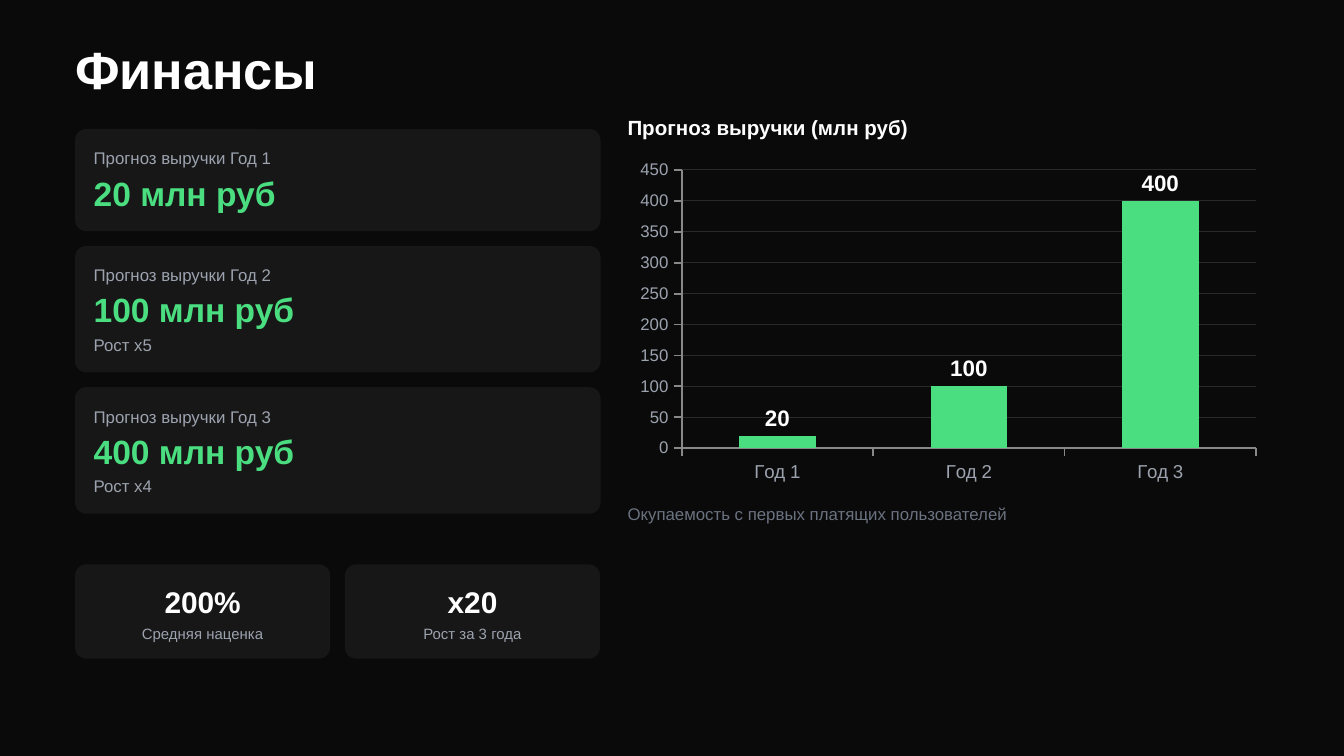
from dataclasses import dataclass

from pptx import Presentation
from pptx.chart.data import CategoryChartData
from pptx.dml.color import RGBColor
from pptx.enum.chart import XL_CHART_TYPE, XL_LABEL_POSITION, XL_TICK_LABEL_POSITION, XL_TICK_MARK
from pptx.enum.shapes import MSO_SHAPE
from pptx.enum.text import MSO_ANCHOR, MSO_AUTO_SIZE, PP_ALIGN
from pptx.util import Cm, Pt


@dataclass(frozen=True)
class Theme:
    """Colours, font and type sizes of the deck."""
    font: str = "Arial"
    bg: str = "0A0A0A"
    card: str = "171717"
    text: str = "FFFFFF"
    muted: str = "9CA3AF"
    faint: str = "6B7280"
    accent: str = "4ADE80"
    axis: str = "888888"
    grid: str = "2A2A2A"
    title: int = 28
    value: int = 18
    stat: int = 16
    bar_label: int = 12
    heading: int = 11
    category: int = 10
    label: int = 9
    small: int = 8


class Deck:
    """Holds the theme and the current slide, and adds elements to it."""

    def __init__(self, prs, theme):
        self.t = theme
        self.s = prs.slides.add_slide(prs.slide_layouts[5])
        fill = self.s.background.fill
        fill.solid()
        fill.fore_color.rgb = RGBColor.from_string(theme.bg)

    def font(self, font, size, color, bold=False):
        font.name, font.size, font.bold = self.t.font, Pt(size), bold
        font.color.rgb = RGBColor.from_string(color)

    def set_text(self, sp, text, size, color, bold, align):
        tf = sp.text_frame
        tf.word_wrap, tf.auto_size = True, MSO_AUTO_SIZE.NONE
        tf.vertical_anchor = MSO_ANCHOR.TOP
        tf.margin_left = tf.margin_right = tf.margin_top = tf.margin_bottom = 0
        p = tf.paragraphs[0]
        p.alignment = align
        r = p.add_run()
        r.text = text
        self.font(r.font, size, color, bold)

    def title(self, text, x, y, w, h):
        sp = self.s.shapes.title
        sp.left, sp.top, sp.width, sp.height = Cm(x), Cm(y), Cm(w), Cm(h)
        self.set_text(sp, text, self.t.title, self.t.text, True, PP_ALIGN.LEFT)

    def text(self, text, x, y, w, h, size, color, bold=False, align=PP_ALIGN.LEFT):
        sp = self.s.shapes.add_textbox(Cm(x), Cm(y), Cm(w), Cm(h))
        self.set_text(sp, text, size, color, bold, align)

    def card(self, x, y, w, h, radius=0.21):
        sp = self.s.shapes.add_shape(MSO_SHAPE.ROUNDED_RECTANGLE, Cm(x), Cm(y), Cm(w), Cm(h))
        sp.adjustments[0] = radius / h
        sp.shadow.inherit = False
        sp.fill.solid()
        sp.fill.fore_color.rgb = RGBColor.from_string(self.t.card)
        sp.line.fill.background()

    def forecast(self, x, y, w, h, label, value, note):
        t = self.t
        self.card(x, y, w, h)
        self.text(label, x + 0.35, y + 0.36, 9.4, 0.38, t.label, t.muted)
        self.text(value, x + 0.35, y + 0.82, 9.4, 0.74, t.value, t.accent, True)
        if note:
            self.text(note, x + 0.35, y + 1.68, 9.4, 0.38, t.label, t.muted)

    def stat(self, x, y, w, h, value, label):
        t = self.t
        self.card(x, y, w, h)
        self.text(value, x + 0.31, y + 0.36, w - 0.62, 0.66, t.stat, t.text, True, PP_ALIGN.CENTER)
        self.text(label, x + 0.31, y + 1.14, w - 0.62, 0.3, t.small, t.muted, align=PP_ALIGN.CENTER)

    def axis(self, axis, size):
        axis.major_tick_mark, axis.minor_tick_mark = XL_TICK_MARK.OUTSIDE, XL_TICK_MARK.NONE
        self.font(axis.tick_labels.font, size, self.t.muted)
        axis.format.line.width = Pt(1)
        axis.format.line.color.rgb = RGBColor.from_string(self.t.axis)

    def columns(self, x, y, w, h, name, cats, vals, top, step):
        t = self.t
        data = CategoryChartData()
        data.categories = cats
        data.add_series(name, vals)
        chart = self.s.shapes.add_chart(
            XL_CHART_TYPE.COLUMN_CLUSTERED, Cm(x), Cm(y), Cm(w), Cm(h), data).chart
        chart.has_title = chart.has_legend = False
        self.font(chart.font, t.category, t.muted)

        cat, val = chart.category_axis, chart.value_axis
        self.axis(cat, t.category)
        cat.tick_label_position = XL_TICK_LABEL_POSITION.LOW
        self.axis(val, t.label)
        val.minimum_scale, val.maximum_scale, val.major_unit = 0, top, step
        val.has_major_gridlines = True
        grid = val.major_gridlines.format.line
        grid.width = Pt(0.5)
        grid.color.rgb = RGBColor.from_string(t.grid)

        plot = chart.plots[0]
        plot.gap_width, plot.vary_by_categories = 150, False
        ser = plot.series[0]
        ser.format.fill.solid()
        ser.format.fill.fore_color.rgb = RGBColor.from_string(t.accent)
        labels = ser.data_labels
        labels.show_value = True
        labels.number_format, labels.number_format_is_linked = "#,##0", False
        labels.position = XL_LABEL_POSITION.OUTSIDE_END
        self.font(labels.font, t.bar_label, t.text, True)


def main():
    prs = Presentation()
    prs.slide_width, prs.slide_height = Cm(25.4), Cm(14.29)
    t = Theme()
    deck = Deck(prs, t)
    left, right, gap = 1.42, 11.86, 0.28

    deck.title("Финансы", left, 0.71, 23.04, 1.14)

    years = ["Год 1", "Год 2", "Год 3"]
    revenue = [20, 100, 400]
    notes = ["", "Рост x5", "Рост x4"]
    y = 2.44
    for year, amount, note in zip(years, revenue, notes):
        h = 2.39 if note else 1.93
        deck.forecast(left, y, 9.93, h, f"Прогноз выручки {year}", f"{amount} млн руб", note)
        y += h + gap

    stats = [("200%", "Средняя наценка"), ("x20", "Рост за 3 года")]
    for i, (value, label) in enumerate(stats):
        deck.stat(left + i * (4.82 + gap), 10.67, 4.82, 1.78, value, label)

    deck.text("Прогноз выручки (млн руб)", right, 2.18, 12.37, 0.43, t.heading, t.text, True)
    deck.columns(right, 2.9, 12.12, 6.35, "Series 1", years, revenue, 450, 50)
    deck.text("Окупаемость с первых платящих пользователей", right, 9.53, 12.37, 0.38, t.label, t.faint)

    prs.save("out.pptx")


if __name__ == "__main__":
    main()
